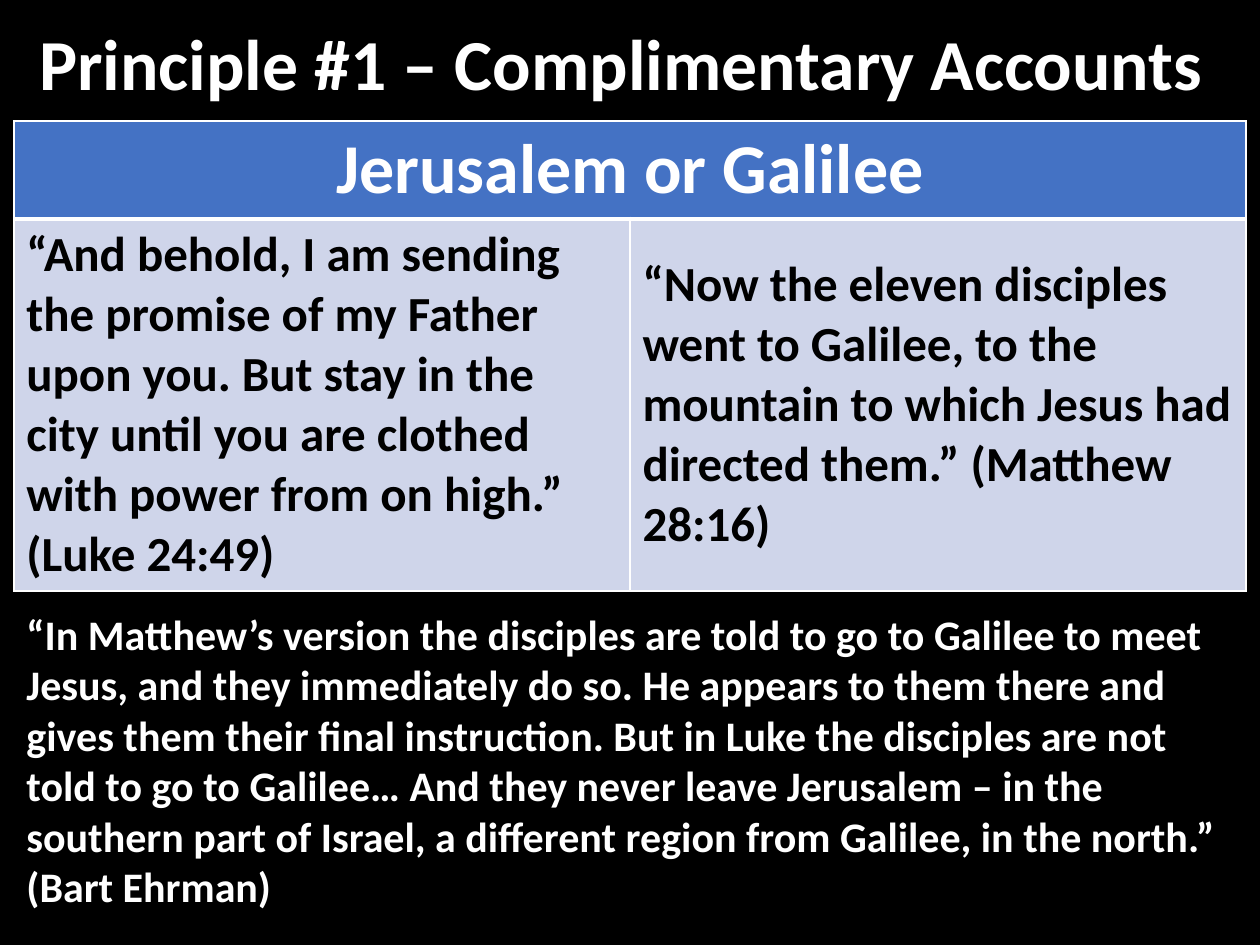
from lxml.etree import SubElement
from pptx import Presentation
from pptx.dml.color import RGBColor
from pptx.enum.text import MSO_ANCHOR, MSO_AUTO_SIZE, PP_ALIGN
from pptx.oxml.ns import qn
from pptx.util import Inches, Pt

TITLE = "Principle #1 – Complimentary Accounts "
HEADING = "Jerusalem or Galilee"
QUOTES = [
    "“And behold, I am sending the promise of my Father upon you. But stay in the city "
    "until you are clothed with power from on high.” (Luke 24:49)",
    "“Now the eleven disciples went to Galilee, to the mountain to which Jesus had "
    "directed them.” (Matthew 28:16)",
]
COMMENT = (
    "“In Matthew’s version the disciples are told to go to Galilee to meet Jesus, and they "
    "immediately do so. He appears to them there and gives them their final instruction. "
    "But in Luke the disciples are not told to go to Galilee… And they never leave "
    "Jerusalem – in the southern part of Israel, a different region from Galilee, in the "
    "north.” (Bart Ehrman)"
)
WHITE, BLACK, BLUE, PALE = "FFFFFF", "000000", "4472C4", "CFD5EA"


def rgb(value):
    return RGBColor.from_string(value)


def set_all(obj, values):
    for name, value in values.items():
        setattr(obj, name, value)


def write(tf, text, size, color, **paragraph):
    p = tf.paragraphs[0]
    set_all(p, paragraph)
    r = p.add_run()
    r.text = text
    set_all(r.font, {"name": "Calibri", "size": Pt(size), "bold": True})
    r.font.color.rgb = rgb(color)
    return p


def fill_placeholder(sp, box, text, size, **paragraph):
    set_all(sp, dict(zip(("left", "top", "width", "height"), map(Inches, box))))
    tf = sp.text_frame
    set_all(tf, {"word_wrap": True, "auto_size": MSO_AUTO_SIZE.NONE,
                 "vertical_anchor": MSO_ANCHOR.MIDDLE})
    return write(tf, text, size, WHITE, **paragraph)


def add_title(slide, box):
    fill_placeholder(slide.shapes.title, box, TITLE, 41,
                     alignment=PP_ALIGN.CENTER, line_spacing=0.9)


def add_comment(slide, box):
    p = fill_placeholder(slide.placeholders[1], box, COMMENT, 24, space_before=Pt(10))
    pPr = p._p.get_or_add_pPr()
    pPr.set("marL", "0")
    pPr.set("indent", "0")
    SubElement(pPr, qn("a:buNone"))


def style_cell(cell, fill, top=1, bottom=1):
    tcPr = cell._tc.get_or_add_tcPr()
    for side, width in {"L": 1, "R": 1, "T": top, "B": bottom}.items():
        ln = SubElement(tcPr, qn(f"a:ln{side}"), w=str(Pt(width)))
        SubElement(SubElement(ln, qn("a:solidFill")), qn("a:srgbClr"), val=WHITE)
    cell.fill.solid()
    cell.fill.fore_color.rgb = rgb(fill)


def add_accounts(slide, box):
    table = slide.shapes.add_table(2, len(QUOTES), *map(Inches, box)).table
    for row, height in zip(table.rows, (0.73, 2.82)):
        row.height = Inches(height)
    heading = table.cell(0, 0)
    heading.merge(table.cell(0, len(QUOTES) - 1))
    write(heading.text_frame, HEADING, 40, WHITE, alignment=PP_ALIGN.CENTER)
    for col, quote in enumerate(QUOTES):
        style_cell(table.cell(0, col), BLUE, bottom=3)
        cell = table.cell(1, col)
        style_cell(cell, PALE, top=3)
        cell.vertical_anchor = MSO_ANCHOR.MIDDLE
        write(cell.text_frame, quote, 28, BLACK)


def main():
    prs = Presentation()
    set_all(prs, {"slide_width": Inches(10), "slide_height": Inches(7.5)})
    slide = prs.slides.add_slide(prs.slide_layouts[1])
    slide.background.fill.solid()
    slide.background.fill.fore_color.rgb = rgb(BLACK)
    left, width = 0.11, 9.78
    add_title(slide, (left, 0.11, width, 0.85))
    add_accounts(slide, (left, 0.96, width, 3.55))
    add_comment(slide, (left, 4.63, width, 2.8))
    prs.save("out.pptx")


if __name__ == "__main__":
    main()
